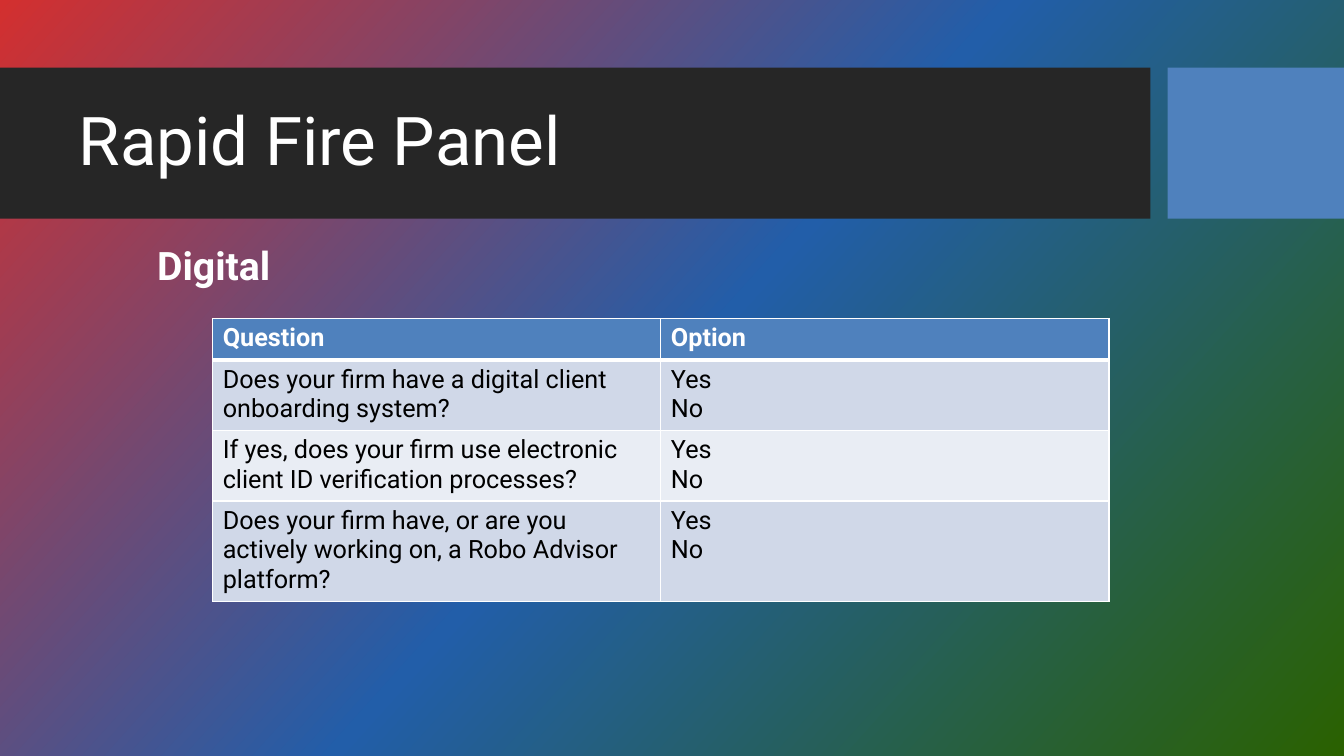
from copy import deepcopy

from pptx import Presentation
from pptx.dml.color import RGBColor
from pptx.enum.shapes import MSO_SHAPE
from pptx.enum.text import MSO_ANCHOR, MSO_AUTO_SIZE, PP_ALIGN
from pptx.oxml import parse_xml
from pptx.oxml.ns import nsdecls, qn
from pptx.util import Inches, Pt


def set_font(paragraph, size, color, bold=False):
    font = paragraph.font
    font.name = "Roboto"
    font.size = Pt(size)
    font.bold = bold
    font.color.rgb = RGBColor.from_string(color)


def add_border(cell, side, width):
    """Draw a white line on one side (L, R, T or B) of a cell; call before filling it."""
    cell._tc.get_or_add_tcPr().append(parse_xml(
        f'<a:ln{side} {nsdecls("a")} w="{Pt(width)}"><a:solidFill>'
        f'<a:srgbClr val="FFFFFF"/></a:solidFill></a:ln{side}>'))


presentation = Presentation()
presentation.slide_width = Inches(13.33)
presentation.slide_height = Inches(7.5)
slide = presentation.slides.add_slide(presentation.slide_layouts[5])

# Background gradient
background = slide.background.fill
background.gradient()
background.gradient_angle = 360 - 42
stop_list = next(slide._element.iter(qn("a:gsLst")))
stop_list.append(deepcopy(stop_list[0]))
gradient = [(0, "D32F2F"), (0.5, "225EA9"), (1, "2A6100")]
for stop, (position, color) in zip(background.gradient_stops, gradient):
    stop.position = position
    stop.color.rgb = RGBColor.from_string(color)

# Title band
for left, width, color in [(0, 11.41, "262626"), (11.58, 1.75, "4F81BD")]:
    bar = slide.shapes.add_shape(
        MSO_SHAPE.RECTANGLE, Inches(left), Inches(0.67), Inches(width), Inches(1.5))
    bar.shadow.inherit = False
    bar.fill.solid()
    bar.fill.fore_color.rgb = RGBColor.from_string(color)
    bar.line.fill.background()

title = slide.shapes.title
slide.shapes._spTree.append(title._element)  # bring in front of the bars
title.left, title.top = Inches(0.68), Inches(0.93)
title.width, title.height = Inches(10.73), Inches(1)
title.text_frame.text = "Rapid Fire Panel"
title.text_frame.auto_size = MSO_AUTO_SIZE.NONE
title.text_frame.vertical_anchor = MSO_ANCHOR.MIDDLE
heading = title.text_frame.paragraphs[0]
heading.alignment = PP_ALIGN.LEFT
heading.line_spacing = 0.9
set_font(heading, 48, "FFFFFF")

# Section name
section = slide.shapes.add_textbox(Inches(1.46), Inches(2.34), Inches(11.65), Inches(4.34))
section.text_frame.word_wrap = True
section.text_frame.text = "Digital"
set_font(section.text_frame.paragraphs[0], 28, "FFFFFF", bold=True)

# Question table
rows = [
    (0.41, "Question", "Option"),
    (0.7, "Does your firm have a digital client onboarding system?", "Yes\nNo"),
    (0.7, "If yes, does your firm use electronic client ID verification processes?", "Yes\nNo"),
    (1, "Does your firm have, or are you actively working on, a Robo Advisor platform?", "Yes\nNo"),
]
table = slide.shapes.add_table(
    len(rows), 2, Inches(2.11), Inches(3.16), Inches(8.89), Inches(2.81)).table
for row_index, (height, *texts) in enumerate(rows):
    table.rows[row_index].height = Inches(height)
    is_header = row_index == 0
    if is_header:
        fill_color = "4F81BD"
    else:
        fill_color = "D0D8E8" if row_index % 2 else "E9EDF4"
    borders = {"L": 1, "R": 1, "T": 3 if row_index == 1 else 1, "B": 3 if is_header else 1}
    for cell, text in zip(table.rows[row_index].cells, texts):
        for side, width in borders.items():
            add_border(cell, side, width)
        cell.fill.solid()
        cell.fill.fore_color.rgb = RGBColor.from_string(fill_color)
        cell.text_frame.text = text
        for paragraph in cell.text_frame.paragraphs:
            set_font(paragraph, 18, "FFFFFF" if is_header else "000000", bold=is_header)

presentation.save("out.pptx")
